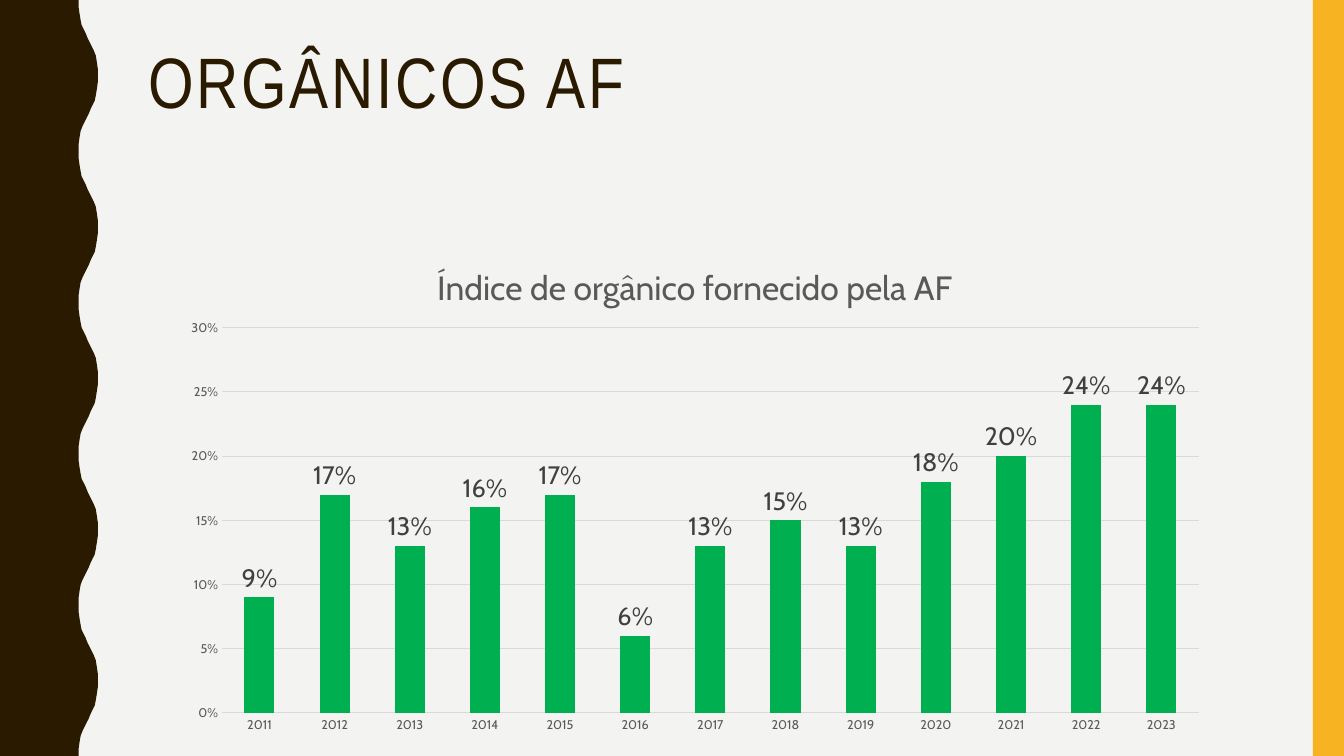
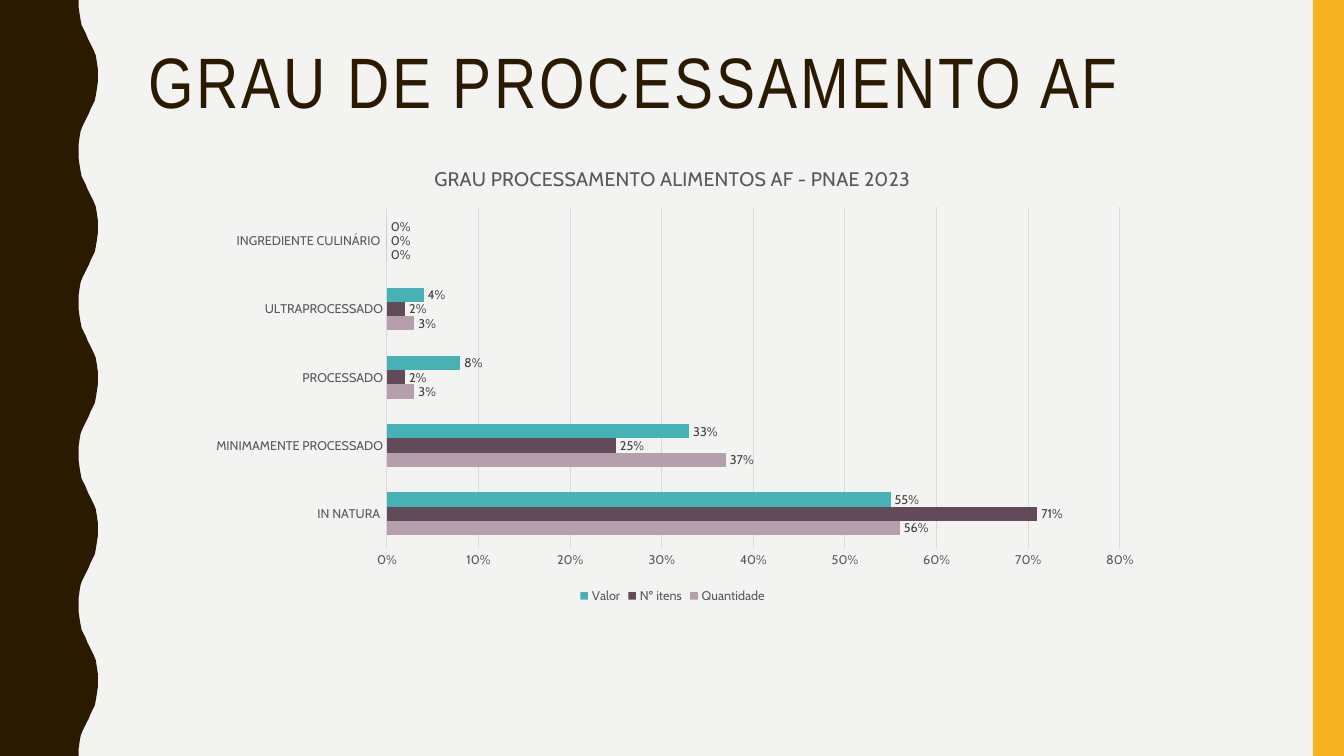
from lxml import etree
from pptx import Presentation
from pptx.chart.data import CategoryChartData
from pptx.dml.color import RGBColor
from pptx.enum.chart import XL_CHART_TYPE, XL_LABEL_POSITION, XL_LEGEND_POSITION, XL_TICK_MARK
from pptx.enum.shapes import MSO_SHAPE
from pptx.enum.text import MSO_ANCHOR
from pptx.oxml import parse_xml
from pptx.oxml.ns import nsdecls
from pptx.util import Inches, Pt

COLORS = {
    "background": "F3F3F2", "brown": "2A1A00", "yellow": "F8B323",
    "chart_text": "595959", "label": "404040", "grid": "D9D9D9",
    "green": "00B050", "mauve": "B69FAD", "plum": "624A58", "teal": "46B2B5",
}
RGB = {name: RGBColor.from_string(value) for name, value in COLORS.items()}
TITLE_FONT, CHART_FONT = "Arial Narrow", "Cabin"

# One half wave of the left band, as x and y; the next half mirrors it.
WAVE_LEFT, WAVE_RIGHT, HALF_WAVE, HALF_WAVES = 0.78, 0.97, 0.75, 10
WAVE = [
    (0.78, 0), (0.78, 0.07), (0.79, 0.14), (0.8, 0.2), (0.81, 0.25),
    (0.83, 0.29), (0.85, 0.33), (0.87, 0.38), (0.89, 0.42), (0.91, 0.46),
    (0.93, 0.5), (0.95, 0.55), (0.96, 0.61), (0.97, 0.68),
]

SLIDES = [
    {
        "title": "ORGÂNICOS AF",
        "chart_title": "Índice de orgânico fornecido pela AF",
        "title_size": 24,
        "type": XL_CHART_TYPE.COLUMN_CLUSTERED,
        "box": (1.68, 2.41, 10.42, 4.96),
        "plot": {"x": 0.05, "y": 0.17, "w": 0.93, "h": 0.77},
        "maximum": 0.3, "step": 0.05, "gap": 150, "label_size": 18,
        "categories": [str(year) for year in range(2011, 2024)],
        "series": [
            ("Índice", "green", [0.09, 0.17, 0.13, 0.16, 0.17, 0.06, 0.13,
                                 0.15, 0.13, 0.18, 0.2, 0.24, 0.24]),
        ],
    },
    {
        "title": "GRAU DE PROCESSAMENTO AF",
        "chart_title": "GRAU PROCESSAMENTO ALIMENTOS AF - PNAE 2023",
        "title_size": 14,
        "type": XL_CHART_TYPE.BAR_CLUSTERED,
        "box": (1.95, 1.46, 9.44, 4.57),
        "plot": {"x": 0.2, "y": 0.13, "w": 0.77, "h": 0.74},
        "maximum": 0.8, "step": 0.1, "gap": 182, "label_size": 9,
        "categories": ["IN NATURA ", "MINIMAMENTE PROCESSADO", "PROCESSADO",
                       "ULTRAPROCESSADO", "INGREDIENTE CULINÁRIO "],
        "series": [
            ("Quantidade", "mauve", [0.56, 0.37, 0.03, 0.03, 0]),
            ("Nº itens", "plum", [0.71, 0.25, 0.02, 0.02, 0]),
            ("Valor", "teal", [0.55, 0.33, 0.08, 0.04, 0]),
        ],
    },
]


def set_font(font, size, color="chart_text", name=CHART_FONT):
    font.size, font.name, font.bold = Pt(size), name, False
    font.color.rgb = RGB[color]


def write_text(text_frame, text, *, letter_spacing=0, line_spacing=None, **font_format):
    """Write one paragraph; letter_spacing is in points."""
    paragraph = text_frame.paragraphs[0]
    paragraph.line_spacing = line_spacing
    run = paragraph.add_run()
    run.text = text
    set_font(run.font, **font_format)
    if letter_spacing:
        run.font._element.set("spc", str(letter_spacing * 100))


presentation = Presentation()
presentation.slide_width, presentation.slide_height = Inches(13.33), Inches(7.5)
background = presentation.slide_master.background.fill
background.solid()
background.fore_color.rgb = RGB["background"]

wave_points = []
for half in range(HALF_WAVES):
    for x, y in WAVE:
        wave_x = WAVE_LEFT + WAVE_RIGHT - x if half % 2 else x
        wave_points.append((Inches(wave_x), Inches(half * HALF_WAVE + y)))
wave_points += [(Inches(WAVE_LEFT), Inches(7.5)), (0, Inches(7.5))]

for content in SLIDES:
    slide = presentation.slides.add_slide(presentation.slide_layouts[6])

    outline = slide.shapes.build_freeform(0, 0)
    outline.add_line_segments(wave_points, close=True)
    wave_band = outline.convert_to_shape()
    right_band = slide.shapes.add_shape(
        MSO_SHAPE.RECTANGLE, Inches(13.02), 0, Inches(0.31), Inches(7.5))
    for band, color in ((wave_band, "brown"), (right_band, "yellow")):
        band.shadow.inherit = False
        band.fill.solid()
        band.fill.fore_color.rgb = RGB[color]
        band.line.fill.background()

    title = slide.shapes.add_textbox(Inches(1.37), Inches(0.42), Inches(11.13), Inches(1.63))
    title.text_frame.word_wrap = True
    title.text_frame.vertical_anchor = MSO_ANCHOR.TOP
    write_text(title.text_frame, content["title"], size=51, color="brown",
               name=TITLE_FONT, letter_spacing=2, line_spacing=0.9)

    chart_data = CategoryChartData(number_format="0%")
    chart_data.categories = content["categories"]
    for name, color, values in content["series"]:
        chart_data.add_series(name, values)
    chart = slide.shapes.add_chart(
        content["type"], *map(Inches, content["box"]), chart_data).chart
    set_font(chart.font, 9)
    chart.has_title = True
    chart.chart_title.include_in_layout = False
    write_text(chart.chart_title.text_frame, content["chart_title"], size=content["title_size"])

    chart.has_legend = len(content["series"]) > 1
    if chart.has_legend:
        chart.legend.position = XL_LEGEND_POSITION.BOTTOM
        chart.legend.include_in_layout = False
        set_font(chart.legend.font, 9)

    for axis in (chart.category_axis, chart.value_axis):
        axis.major_tick_mark = axis.minor_tick_mark = XL_TICK_MARK.NONE
        set_font(axis.tick_labels.font, 9)
    chart.category_axis.has_major_gridlines = False
    value_axis = chart.value_axis
    value_axis.has_major_gridlines = True
    value_axis.minimum_scale, value_axis.maximum_scale = 0, content["maximum"]
    value_axis.major_unit = content["step"]
    value_axis.tick_labels.number_format = "0%"
    value_axis.tick_labels.number_format_is_linked = False
    value_axis.format.line.fill.background()
    for line in (chart.category_axis.format.line, value_axis.major_gridlines.format.line):
        line.color.rgb = RGB["grid"]
        line.width = Pt(0.75)

    plot = chart.plots[0]
    plot.gap_width = content["gap"]
    plot.vary_by_categories = False
    for series, (name, color, values) in zip(plot.series, content["series"]):
        series.invert_if_negative = False
        series.format.fill.solid()
        series.format.fill.fore_color.rgb = RGB[color]
        labels = series.data_labels
        labels.show_value = True
        labels.position = XL_LABEL_POSITION.OUTSIDE_END
        labels.number_format = "0%"
        labels.number_format_is_linked = False
        set_font(labels.font, content["label_size"], "label")

    layout = parse_xml(
        f'<c:layout {nsdecls("c")}><c:manualLayout><c:layoutTarget val="inner"/>'
        '<c:xMode val="edge"/><c:yMode val="edge"/></c:manualLayout></c:layout>')
    for key, share in content["plot"].items():
        etree.SubElement(layout[0], layout.tag.replace("layout", key)).set("val", str(share))
    plot_area = chart._chartSpace.chart.plotArea
    for automatic_layout in plot_area.findall(layout.tag):
        plot_area.remove(automatic_layout)
    plot_area.insert(0, layout)

presentation.save("out.pptx")
